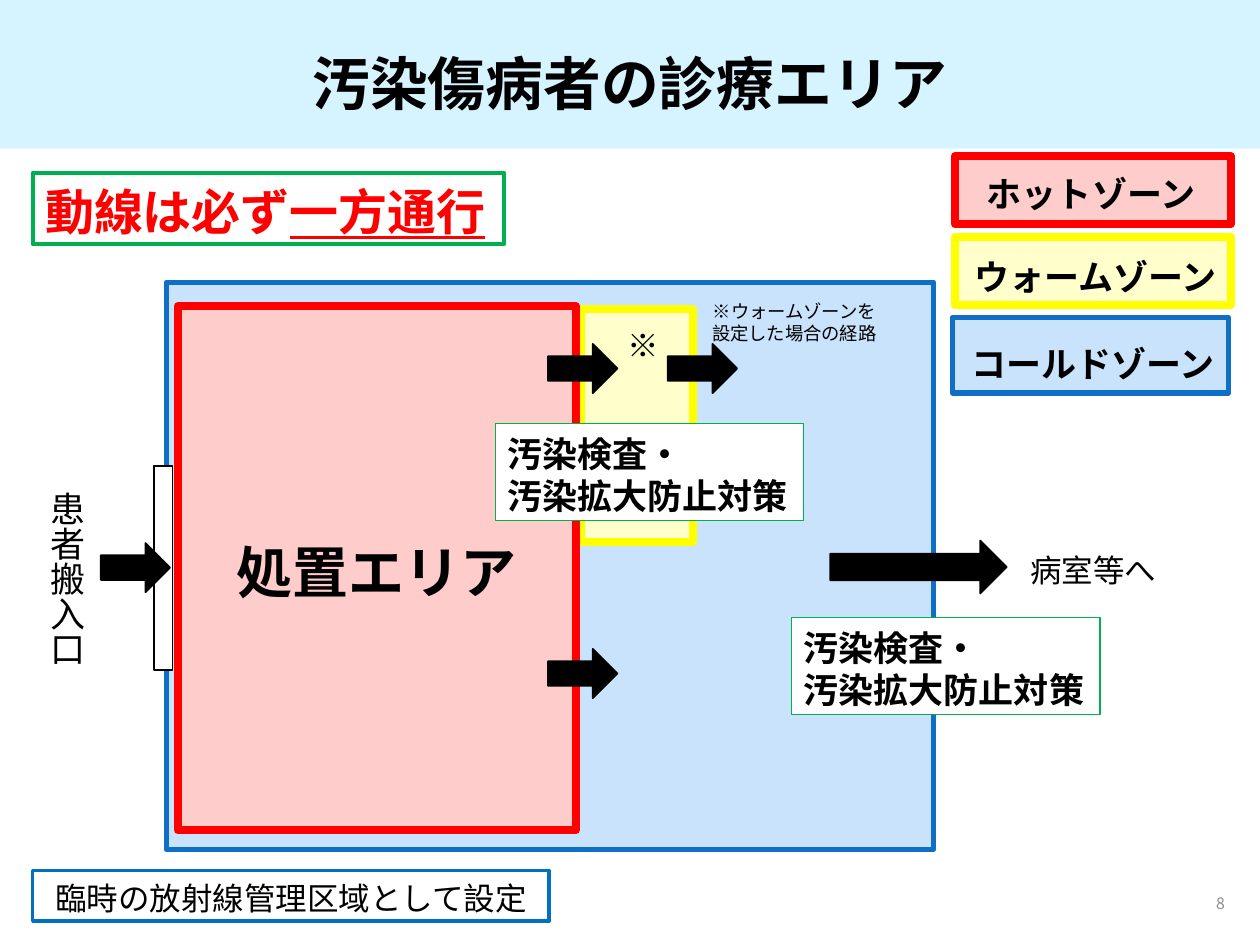
"""Builds the slide on treatment zones for contaminated patients."""
from dataclasses import dataclass

from pptx import Presentation
from pptx.dml.color import RGBColor
from pptx.enum.shapes import MSO_SHAPE
from pptx.enum.text import MSO_ANCHOR, PP_ALIGN
from pptx.oxml.ns import qn
from pptx.util import Inches, Pt

RECT, ARROW = MSO_SHAPE.RECTANGLE, MSO_SHAPE.RIGHT_ARROW
LEFT, CENTER, RIGHT = PP_ALIGN.LEFT, PP_ALIGN.CENTER, PP_ALIGN.RIGHT
TOP, MIDDLE = MSO_ANCHOR.TOP, MSO_ANCHOR.MIDDLE


@dataclass(frozen=True)
class Theme:
    font: str = "Noto Sans CJK JP"
    black: str = "000000"
    white: str = "FFFFFF"
    grey: str = "8C8C8C"
    band: str = "D6F4FF"
    hot: str = "FF0000"
    hot_fill: str = "FFCCCC"
    warm: str = "FFFF00"
    warm_fill: str = "FFFFCC"
    cold: str = "0F6FC6"
    cold_fill: str = "C8E3FB"
    green: str = "00B050"
    blue: str = "0070C0"
    title: float = 33
    area: float = 32
    rule: float = 28
    label: float = 20
    body: float = 18
    note: float = 10.5
    number: float = 9


theme = Theme()


def add_box(at, fill=None, line=None, weight=1, kind=RECT):
    box = slide.shapes.add_shape(kind, *map(Inches, at))
    box.shadow.inherit = False
    if fill:
        box.fill.solid()
        box.fill.fore_color.rgb = RGBColor.from_string(fill)
    else:
        box.fill.background()
    if line:
        box.line.color.rgb = RGBColor.from_string(line)
        box.line.width = Pt(weight)
    else:
        box.line.fill.background()
    return box


def write(shape, text, size, bold=False, align=LEFT, color=theme.black, anchor=TOP, wrap=True):
    frame = shape.text_frame
    frame.text = text
    frame.word_wrap = wrap
    frame.vertical_anchor = anchor
    frame.margin_top, frame.margin_bottom = Inches(0.07), Inches(0.03)
    for paragraph in frame.paragraphs:
        paragraph.alignment = align
        paragraph.line_spacing = Pt(size * 1.2)
        for run in paragraph.runs:
            run.font.size, run.font.bold, run.font.name = Pt(size), bold, theme.font
            run.font.color.rgb = RGBColor.from_string(color)
            east_asian = run.font._element.makeelement(qn("a:ea"), {"typeface": theme.font})
            run.font._element.find(qn("a:latin")).addnext(east_asian)
    return frame


prs = Presentation()
prs.slide_width, prs.slide_height = Inches(10), Inches(7.5)
slide = prs.slides.add_slide(prs.slide_layouts[5])

band = add_box((0, 0, 10, 1.18), theme.band)
heading = slide.shapes.title
band._element.getparent().insert(2, band._element)
heading.left, heading.top, heading.width, heading.height = map(Inches, (0.69, 0.21, 8.62, 0.85))
write(heading, "汚染傷病者の診療エリア", theme.title, True, CENTER, anchor=MIDDLE)

page_number = slide.shapes.add_textbox(*map(Inches, (7.57, 6.95, 2.25, 0.4)))
write(page_number, "8", theme.number, align=RIGHT, color=theme.grey, anchor=MIDDLE)

add_box((1.32, 2.24, 6.09, 4.5), theme.cold_fill, theme.cold, 3)
add_box((1.22, 3.7, 0.15, 1.62), theme.white, theme.black)
entrance = slide.shapes.add_textbox(*map(Inches, (0.21, 3.83, 0.54, 1.5)))
write(entrance, "患者搬入口", theme.label, wrap=False)
entrance.text_frame._txBody.bodyPr.set("vert", "eaVert")
add_box((4.61, 2.45, 0.89, 1.85), theme.warm_fill, theme.warm, 4.5)
treatment_area = add_box((1.41, 2.43, 3.16, 4.16), theme.hot_fill, theme.hot, 4.5)
write(treatment_area, "処置エリア", theme.area, True, CENTER, anchor=MIDDLE)

zones = [
    ("ホットゾーン", (7.58, 1.24, 2.19, 0.54), (7.6, 1.3, 2.12, 0.44), theme.hot_fill, theme.hot, 4.5),
    ("ウォームゾーン", (7.58, 1.88, 2.19, 0.54), (7.61, 1.96, 2.17, 0.44), theme.warm_fill, theme.warm, 4.5),
    ("コールドゾーン", (7.56, 2.52, 2.19, 0.6), (7.59, 2.65, 2.17, 0.44), theme.cold_fill, theme.cold, 3),
]
for zone, swatch_at, name_at, fill, line, weight in zones:
    add_box(swatch_at, fill, line, weight)
    zone_name = slide.shapes.add_textbox(*map(Inches, name_at))
    write(zone_name, zone, theme.label, True, CENTER)

one_way_rule = add_box((0.26, 1.37, 3.74, 0.57), line=theme.green, weight=2.25)
rule_text = write(one_way_rule, "動線は必ず\v一方通行".replace("\v", ""), theme.rule, True, color=theme.hot, wrap=False)
plain_run = rule_text.paragraphs[0].runs[0]
plain_run.text = "動線は必ず"
one_way_run = rule_text.paragraphs[0].add_run()
one_way_run.text = "一方通行"
one_way_run.font.size, one_way_run.font.bold = Pt(theme.rule), True
one_way_run.font.name, one_way_run.font.underline = theme.font, True
one_way_run.font.color.rgb = RGBColor.from_string(theme.hot)
one_way_run.font._element.append(
    one_way_run.font._element.makeelement(qn("a:ea"), {"typeface": theme.font}))

controlled_area = add_box((0.26, 6.91, 4.1, 0.4), line=theme.blue, weight=2)
write(controlled_area, "臨時の放射線管理区域として設定", theme.body, align=CENTER)

for left, top in [(3.93, 3.36), (6.28, 4.9)]:
    checkpoint = add_box((left, top, 2.45, 0.77), theme.white, theme.green, 0.75)
    write(checkpoint, "汚染検査・\n汚染拡大防止対策", theme.label, True, wrap=False)

for left, top in [(0.8, 4.31), (4.35, 2.73), (5.3, 2.73), (4.35, 5.15)]:
    add_box((left, top, 0.55, 0.39), theme.black, theme.black, kind=ARROW)
add_box((6.59, 4.29, 1.4, 0.42), theme.black, theme.black, kind=ARROW)

remarks = [
    ("病室等へ", (8.08, 4.3, 1.21, 0.4), theme.body, LEFT, False),
    ("※", (4.88, 2.52, 0.37, 0.4), theme.body, LEFT, True),
    ("※ウォームゾーンを設定した場合の経路", (5.5, 2.31, 1.61, 0.45), theme.note, CENTER, True),
]
for remark, at, size, align, wrap in remarks:
    remark_box = slide.shapes.add_textbox(*map(Inches, at))
    write(remark_box, remark, size, align=align, wrap=wrap)

prs.save("out.pptx")
